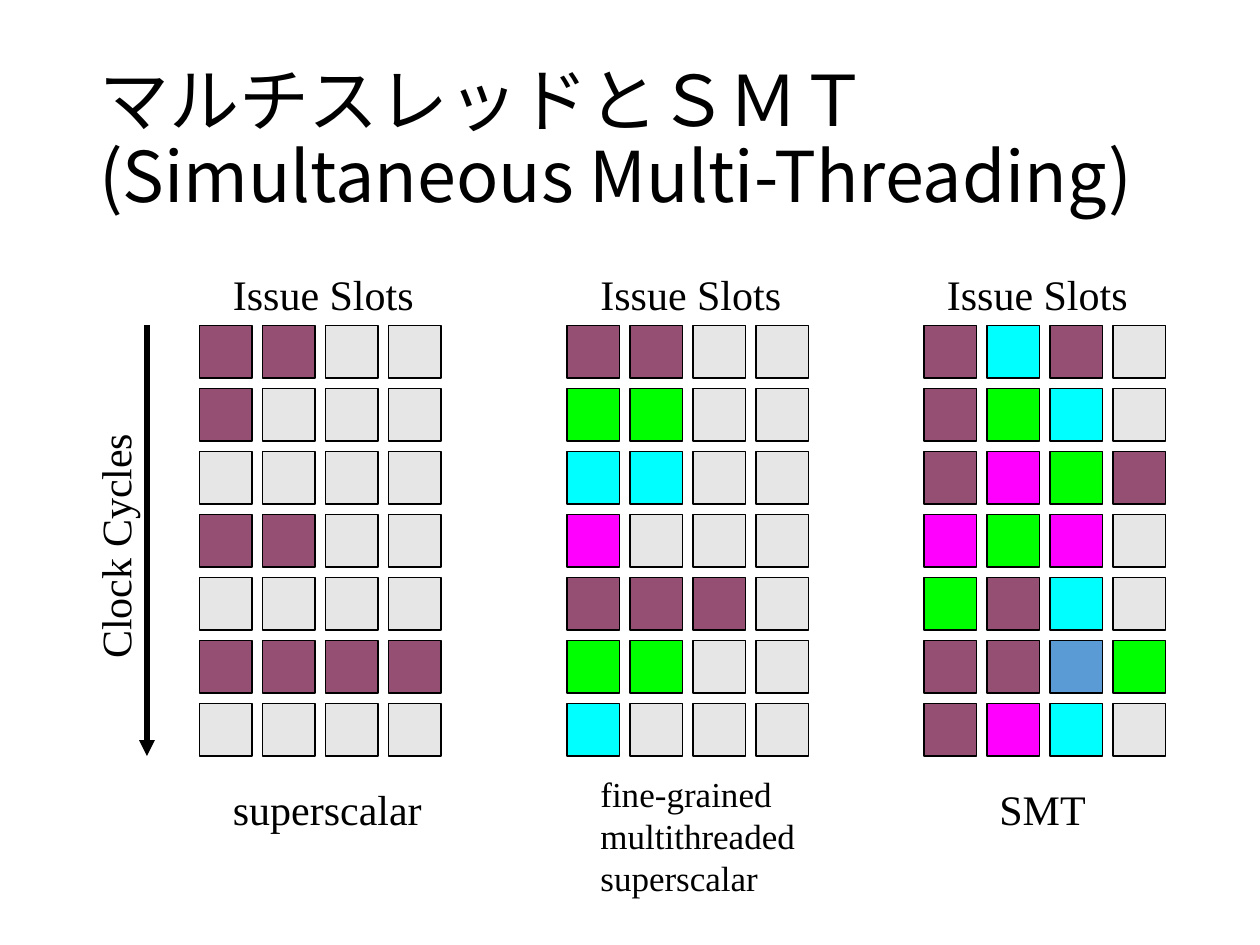
"""Build a slide comparing how superscalar, multithreaded and SMT processors fill issue slots."""
import pptx
import pptx.dml.color
import pptx.enum.shapes
import pptx.enum.text
import pptx.oxml.ns
import pptx.util
from lxml import etree

Pt = pptx.util.Pt
COLOURS = {
    "ink": "000000", ".": "E7E6E6", "P": "954F72", "G": "00FF00",
    "C": "00FFFF", "M": "FF00FF", "B": "5B9BD5",
}
SLOT_SIZE, SLOT_PITCH, GRID_TOP = 30, 36, 186
GRIDS = [
    (114, ["PP..", "P...", "....", "PP..", "....", "PPPP", "...."]),
    (324, ["PP..", "GG..", "CC..", "M...", "PPP.", "GG..", "C..."]),
    (528, ["PCP.", "PGC.", "PMGP", "MGM.", "GPC.", "PPBG", "PMC."]),
]
LABELS = [
    ("Issue Slots", (126, 150, 118, 36), {}),
    ("Issue Slots", (336, 150, 118, 36), {}),
    ("Issue Slots", (534, 150, 118, 36), {}),
    ("Clock Cycles", (-6, 294, 143, 36), {"rotation": 270}),
    ("superscalar", (126, 444, 122.4, 36), {}),
    ("fine-grained\nmultithreaded\nsuperscalar", (336, 438, 126, 79), {"size": 20, "wrap": True}),
    ("SMT", (564, 444, 64, 36), {}),
]


def colour(name):
    return pptx.dml.color.RGBColor.from_string(COLOURS[name])


def apply(target, values):
    for name, value in values.items():
        setattr(target, name, value)


def style_text(frame, font, size):
    for para in frame.paragraphs:
        for span in para.runs:
            apply(span.font, {"name": font, "size": Pt(size)})
            span.font.color.rgb = colour("ink")
            east_asian = etree.SubElement(span.font._element, pptx.oxml.ns.qn("a:ea"))
            east_asian.set("typeface", font)


def set_title(page, text):
    title = page.shapes.title
    apply(title, {"left": Pt(49.5), "top": Pt(28.75), "width": Pt(621), "height": Pt(104.4)})
    frame = title.text_frame
    frame.text = text
    apply(frame, {
        "word_wrap": True,
        "auto_size": pptx.enum.text.MSO_AUTO_SIZE.NONE,
        "vertical_anchor": pptx.enum.text.MSO_ANCHOR.MIDDLE,
    })
    apply(frame.paragraphs[0], {"alignment": pptx.enum.text.PP_ALIGN.LEFT, "line_spacing": 0.9})
    style_text(frame, "Noto Sans CJK JP", 40)


def add_label(page, text, place, size=24, wrap=False, rotation=0):
    box = page.shapes.add_textbox(*map(Pt, place))
    box.rotation = rotation
    frame = box.text_frame
    frame.text = text
    apply(frame, {
        "word_wrap": wrap,
        "auto_size": pptx.enum.text.MSO_AUTO_SIZE.SHAPE_TO_FIT_TEXT,
    })
    style_text(frame, "Times New Roman", size)


def add_slot(page, left, top, kind):
    slot = page.shapes.add_shape(
        pptx.enum.shapes.MSO_SHAPE.RECTANGLE, Pt(left), Pt(top), Pt(SLOT_SIZE), Pt(SLOT_SIZE))
    slot.shadow.inherit = False
    slot.fill.solid()
    slot.fill.fore_color.rgb = colour(kind)
    slot.line.color.rgb = colour("ink")
    slot.line.width = Pt(0.75)


def add_grid(page, left, rows):
    for row, kinds in enumerate(rows):
        for column, kind in enumerate(kinds):
            add_slot(page, left + column * SLOT_PITCH, GRID_TOP + row * SLOT_PITCH, kind)


def add_arrow(page, x, top, bottom):
    arrow = page.shapes.add_connector(
        pptx.enum.shapes.MSO_CONNECTOR.STRAIGHT, Pt(x), Pt(top), Pt(x), Pt(bottom))
    arrow.line.color.rgb = colour("ink")
    arrow.line.width = Pt(3)
    properties = arrow._element.spPr
    line = properties.find(pptx.oxml.ns.qn("a:ln"))
    etree.SubElement(line, pptx.oxml.ns.qn("a:tailEnd")).set("type", "triangle")
    etree.SubElement(properties, pptx.oxml.ns.qn("a:effectLst"))


def main():
    deck = pptx.Presentation()
    apply(deck, {"slide_width": Pt(720), "slide_height": Pt(540)})
    page = deck.slides.add_slide(deck.slide_layouts.get_by_name("Title Only"))
    set_title(page, "マルチスレッドとＳＭＴ(Simultaneous Multi-Threading)")
    for left, rows in GRIDS:
        add_grid(page, left, rows)
    add_arrow(page, 84, GRID_TOP, 432)
    for text, place, options in LABELS:
        add_label(page, text, place, **options)
    deck.save("out.pptx")


if __name__ == "__main__":
    main()
